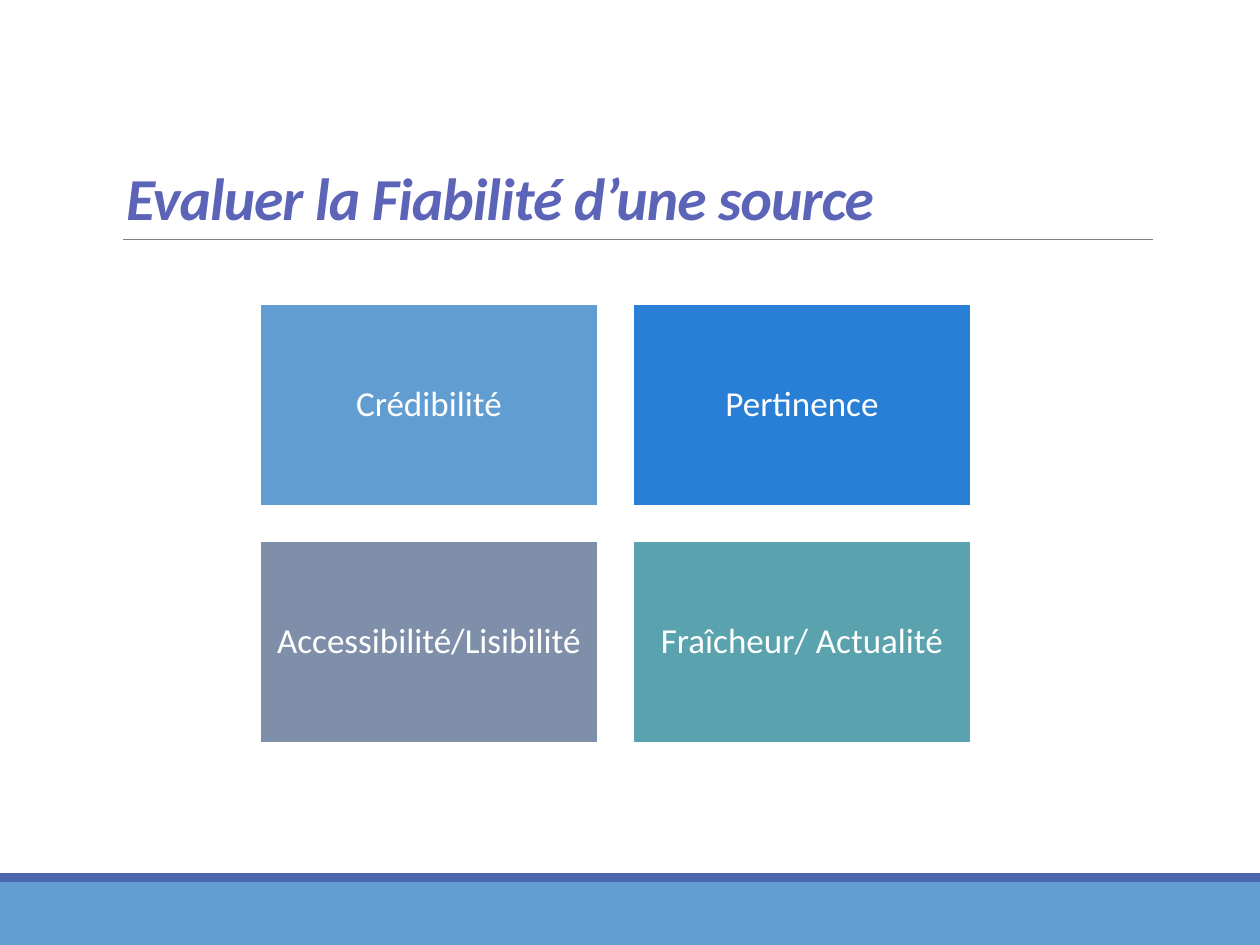
from dataclasses import dataclass

from pptx import Presentation
from pptx.dml.color import RGBColor
from pptx.enum.shapes import MSO_CONNECTOR, MSO_SHAPE
from pptx.enum.text import MSO_ANCHOR, MSO_AUTO_SIZE, PP_ALIGN
from pptx.oxml.ns import qn
from pptx.util import Inches, Pt


@dataclass(frozen=True)
class Theme:
    font: str = "Calibri"
    title_size: int = 34
    tile_size: int = 20
    title: str = "5C64B7"
    white: str = "FFFFFF"
    rule: str = "808080"
    band: str = "629DD1"
    band_edge: str = "4A66AC"


THEME = Theme()
SLIDE_WIDTH, SLIDE_HEIGHT = 10, 7.5
GRID_LEFT, GRID_TOP = 2.06, 2.41
TILE_WIDTH, TILE_HEIGHT, GAP = 2.69, 1.61, 0.27
COLUMNS = 2
CRITERIA = [
    ("Crédibilité", "629DD1"),
    ("Pertinence", "297FD5"),
    ("Accessibilité/Lisibilité", "7F8FA9"),
    ("Fraîcheur/ Actualité", "5AA2AE"),
]


def color(value):
    return RGBColor.from_string(value)


def style_font(font, size, value):
    font.name = THEME.font
    font.size = Pt(size)
    font.color.rgb = color(value)


def add_rectangle(shapes, left, top, width, height, fill):
    shape = shapes.add_shape(MSO_SHAPE.RECTANGLE, Inches(left), Inches(top),
                             Inches(width), Inches(height))
    shape.shadow.inherit = False
    shape.fill.solid()
    shape.fill.fore_color.rgb = color(fill)
    shape.line.fill.background()
    return shape


def add_footer_bands(slide):
    band_height, edge_height = 0.5, 0.07
    band_top = SLIDE_HEIGHT - band_height
    add_rectangle(slide.shapes, 0, band_top, SLIDE_WIDTH, band_height, THEME.band)
    add_rectangle(slide.shapes, 0, band_top - edge_height, SLIDE_WIDTH,
                  edge_height, THEME.band_edge)


def add_title_rule(slide):
    rule = slide.shapes.add_connector(MSO_CONNECTOR.STRAIGHT, Inches(0.98), Inches(1.9),
                                      Inches(9.15), Inches(1.9))
    rule.line.color.rgb = color(THEME.rule)
    rule.line.width = Pt(0.5)
    properties = rule.element.find(qn("p:spPr"))
    properties.append(properties.makeelement(qn("a:effectLst"), {}))


def set_title(slide, text):
    title = slide.shapes.title
    title.left, title.top = Inches(0.9), Inches(0.31)
    title.width, title.height = Inches(8.25), Inches(1.59)
    frame = title.text_frame
    frame.text = text
    frame.word_wrap = True
    frame.auto_size = MSO_AUTO_SIZE.NONE
    frame.vertical_anchor = MSO_ANCHOR.BOTTOM
    paragraph = frame.paragraphs[0]
    paragraph.alignment = PP_ALIGN.LEFT
    paragraph.line_spacing = 0.85
    style_font(paragraph.font, THEME.title_size, THEME.title)
    paragraph.font.bold = paragraph.font.italic = True
    for properties in title.element.iter(qn("a:defRPr")):
        properties.set("spc", "-50")


def add_tile(shapes, column, row, text, fill):
    tile = add_rectangle(shapes, GRID_LEFT + column * (TILE_WIDTH + GAP),
                         GRID_TOP + row * (TILE_HEIGHT + GAP),
                         TILE_WIDTH, TILE_HEIGHT, fill)
    tile.line.color.rgb = color(THEME.white)
    tile.line.width = Pt(1.25)
    frame = tile.text_frame
    frame.text = text
    frame.word_wrap = True
    frame.vertical_anchor = MSO_ANCHOR.MIDDLE
    frame.margin_left = frame.margin_right = Inches(0.08)
    frame.margin_top = frame.margin_bottom = Inches(0.08)
    paragraph = frame.paragraphs[0]
    paragraph.alignment = PP_ALIGN.CENTER
    paragraph.line_spacing = 0.9
    style_font(paragraph.font, THEME.tile_size, THEME.white)


def add_criteria_grid(slide):
    group = slide.shapes.add_group_shape()
    for index, (text, fill) in enumerate(CRITERIA):
        row, column = divmod(index, COLUMNS)
        add_tile(group.shapes, column, row, text, fill)


def main():
    presentation = Presentation()
    presentation.slide_width = Inches(SLIDE_WIDTH)
    presentation.slide_height = Inches(SLIDE_HEIGHT)
    title_only = presentation.slide_layouts.get_by_name("Title Only")
    slide = presentation.slides.add_slide(title_only)
    add_footer_bands(slide)
    add_title_rule(slide)
    set_title(slide, "Evaluer la Fiabilité d’une source")
    add_criteria_grid(slide)
    presentation.save("out.pptx")


if __name__ == "__main__":
    main()
